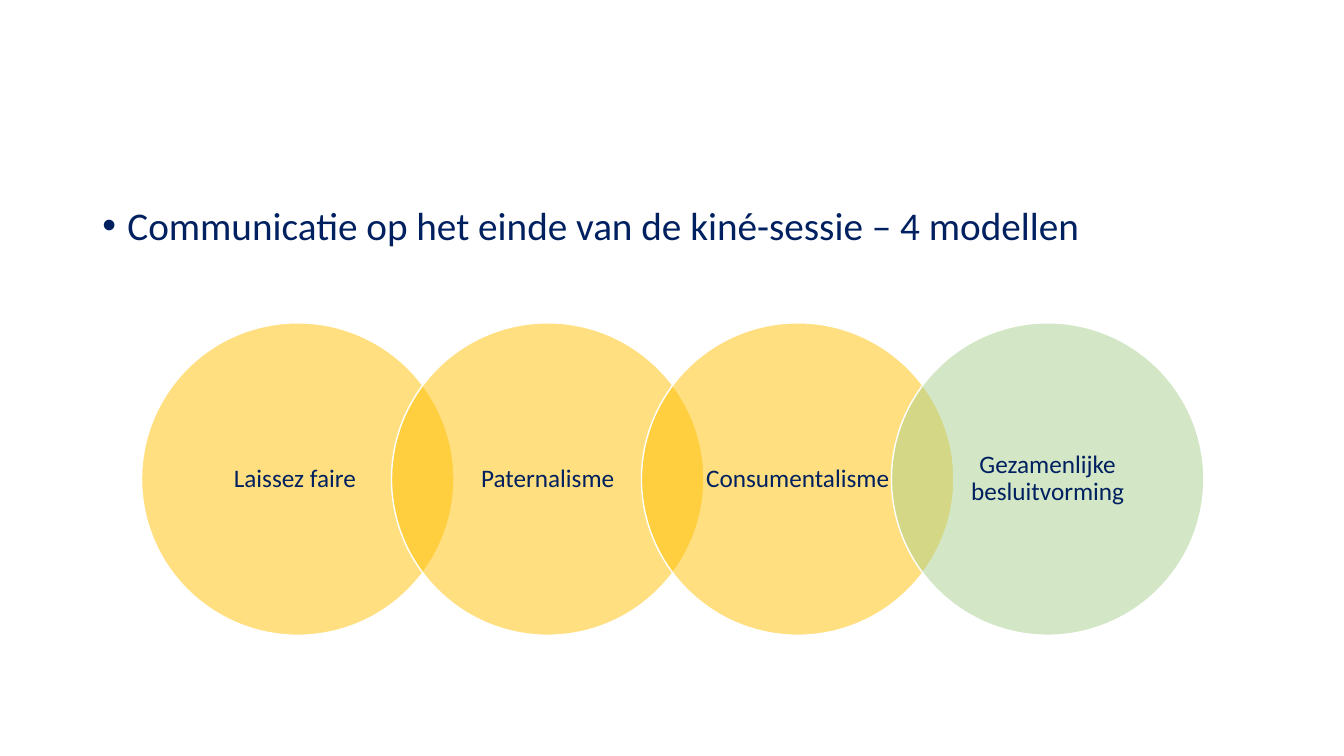
from lxml.etree import SubElement
from pptx import Presentation
from pptx.dml.color import RGBColor
from pptx.enum.shapes import MSO_SHAPE
from pptx.enum.text import MSO_ANCHOR, PP_ALIGN
from pptx.oxml.ns import qn
from pptx.util import Pt

NAVY = RGBColor(0x00, 0x20, 0x60)
AMBER = RGBColor(0xFF, 0xC0, 0x00)
GREEN = RGBColor(0xA9, 0xD1, 0x8E)
WHITE = RGBColor(0xFF, 0xFF, 0xFF)

DIAMETER = 223.2
STEP = 0.8 * DIAMETER
FIRST_LEFT = 101.1
CIRCLE_TOP = 230.6

MODELS = [
    ("Laissez faire ", AMBER),
    ("Paternalisme", AMBER),
    ("Consumentalisme", AMBER),
    ("Gezamenlijke besluitvorming", GREEN),
]


def add_words(paragraph, words, size):
    paragraph.line_spacing = 0.9
    run = paragraph.add_run()
    run.text = words
    run.font.name = "Calibri"
    run.font.size = Pt(size)
    run.font.color.rgb = NAVY


def add_bullet_line(slide, words):
    body = slide.shapes.add_textbox(Pt(66), Pt(144), Pt(828), Pt(343))
    body.text_frame.word_wrap = True
    line = body.text_frame.paragraphs[0]
    add_words(line, words, 28)
    properties = line._p.get_or_add_pPr()
    properties.set("marL", str(Pt(18)))
    properties.set("indent", str(Pt(-18)))
    SubElement(properties, qn("a:buFont"), typeface="Arial")
    SubElement(properties, qn("a:buChar"), char="•")


def add_model_circle(slide, left, label, color):
    circle = slide.shapes.add_shape(
        MSO_SHAPE.OVAL, Pt(left), Pt(CIRCLE_TOP), Pt(DIAMETER), Pt(DIAMETER)
    )
    circle.shadow.inherit = False
    circle.fill.solid()
    circle.fill.fore_color.rgb = color
    tint = circle._element.spPr.find(qn("a:solidFill"))[0]
    SubElement(tint, qn("a:alpha"), val="50000")
    circle.line.color.rgb = WHITE
    circle.line.width = Pt(1)

    frame = circle.text_frame
    frame.word_wrap = True
    frame.vertical_anchor = MSO_ANCHOR.MIDDLE
    frame.margin_left = frame.margin_right = Pt(12)
    frame.margin_top = frame.margin_bottom = Pt(2)
    frame.paragraphs[0].alignment = PP_ALIGN.CENTER
    add_words(frame.paragraphs[0], label, 18)


def main():
    deck = Presentation()
    deck.slide_width = Pt(960)
    deck.slide_height = Pt(540)
    slide = deck.slides.add_slide(deck.slide_layouts[6])
    add_bullet_line(slide, "Communicatie op het einde van de kiné-sessie – 4 modellen")
    for position, (label, color) in enumerate(MODELS):
        add_model_circle(slide, FIRST_LEFT + position * STEP, label, color)
    deck.save("out.pptx")


if __name__ == "__main__":
    main()
